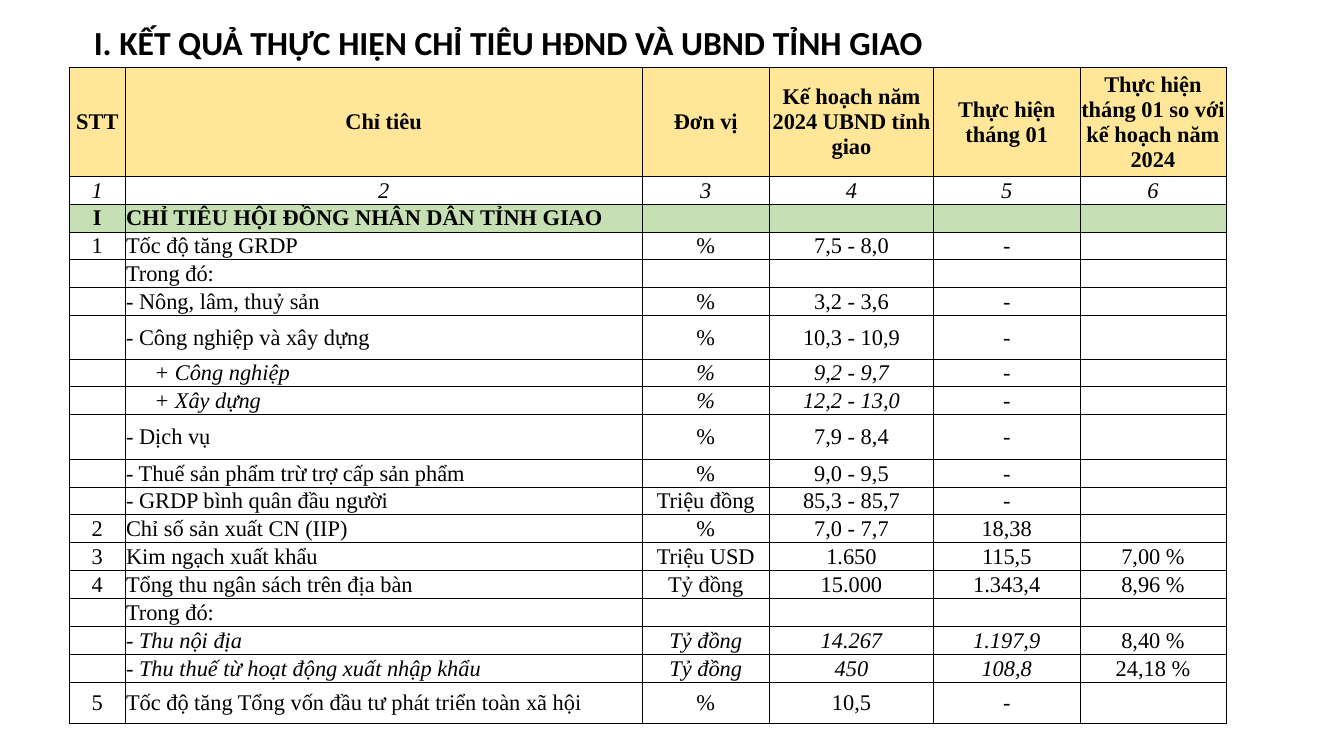
from dataclasses import dataclass

from lxml.etree import SubElement
from pptx import Presentation
from pptx.dml.color import RGBColor
from pptx.enum.text import MSO_ANCHOR, MSO_AUTO_SIZE, PP_ALIGN
from pptx.oxml.ns import qn
from pptx.slide import Slide
from pptx.table import _Cell
from pptx.text.text import TextFrame
from pptx.util import Inches, Pt

BLACK = RGBColor(0x00, 0x00, 0x00)
GOLD = RGBColor(0xFF, 0xE6, 0x99)
GREEN = RGBColor(0xC6, 0xE0, 0xB4)

WIDTHS = (0.55, 5.13, 1.26, 1.63, 1.45, 1.45)
FULL = 6.47
NAME_COL, LAST_COL = 1, 5
EDGE, INDENT = 0.01, 0.29


@dataclass(frozen=True)
class Row:
    cells: tuple[str, ...]
    height: float | None = None
    fill: RGBColor | None = None
    bold: bool = False
    italic: bool = False
    head: bool = False
    indent: float = EDGE


ROWS = (
    Row(("STT", "Chỉ tiêu", "Đơn vị", "Kế hoạch năm 2024 UBND tỉnh giao",
         "Thực hiện tháng 01", "Thực hiện tháng 01 so với kế hoạch năm 2024"),
        height=1.07, fill=GOLD, bold=True, head=True),
    Row(("1", "2", "3", "4", "5", "6"), italic=True, head=True),
    Row(("I", "CHỈ TIÊU HỘI ĐỒNG NHÂN DÂN TỈNH GIAO", "", "", "", ""),
        fill=GREEN, bold=True),
    Row(("1", "Tốc độ tăng GRDP", "%", "7,5 - 8,0", "-", "")),
    Row(("", "Trong đó:", "", "", "", "")),
    Row(("", "- Nông, lâm, thuỷ sản", "%", "3,2 - 3,6", "-", "")),
    Row(("", "- Công nghiệp và xây dựng", "%", "10,3 - 10,9", "-", ""), height=0.43),
    Row(("", "+ Công nghiệp", "%", "9,2 - 9,7", "-", ""), italic=True, indent=INDENT),
    Row(("", "+ Xây dựng", "%", "12,2 - 13,0", "-", ""), italic=True, indent=INDENT),
    Row(("", "- Dịch vụ", "%", "7,9 - 8,4", "-", ""), height=0.44),
    Row(("", "- Thuế sản phẩm trừ trợ cấp sản phẩm", "%", "9,0 - 9,5", "-", "")),
    Row(("", "- GRDP bình quân đầu người", "Triệu đồng", "85,3 - 85,7", "-", "")),
    Row(("2", "Chỉ số sản xuất CN (IIP)", "%", "7,0 - 7,7", "18,38", "")),
    Row(("3", "Kim ngạch xuất khẩu", "Triệu USD", "1.650", "115,5", "7,00 %")),
    Row(("4", "Tổng thu ngân sách trên địa bàn", "Tỷ đồng", "15.000", "1.343,4", "8,96 %")),
    Row(("", "Trong đó:", "", "", "", "")),
    Row(("", "- Thu nội địa", "Tỷ đồng", "14.267", "1.197,9", "8,40 %"), italic=True),
    Row(("", "- Thu thuế từ hoạt động xuất nhập khẩu", "Tỷ đồng", "450", "108,8", "24,18 %"),
        italic=True),
    Row(("5", "Tốc độ tăng Tổng vốn đầu tư phát triển toàn xã hội", "%", "10,5", "-", ""),
        height=0.41),
)


def write(frame: TextFrame, text: str, *, font: str = "Times New Roman", size: int = 16,
          bold: bool = False, italic: bool = False, align: PP_ALIGN = PP_ALIGN.CENTER) -> None:
    line = frame.paragraphs[0]
    line.alignment = align
    run = line.add_run()
    run.text = text
    run.font.name = font
    run.font.size = Pt(size)
    run.font.bold = bold
    run.font.italic = italic
    run.font.color.rgb = BLACK


def shrink(frame: TextFrame) -> None:
    """Keep an empty cell from making its row taller."""
    SubElement(frame.paragraphs[0]._p, qn("a:endParaRPr"), sz="1200")


def border(cell: _Cell) -> None:
    props = cell._tc.get_or_add_tcPr()
    for side in ("a:lnL", "a:lnR", "a:lnT", "a:lnB"):
        line = SubElement(props, qn(side), w=str(Pt(0.5)))
        paint = SubElement(line, qn("a:solidFill"))
        SubElement(paint, qn("a:srgbClr"), val=str(BLACK))


def draw_cell(cell: _Cell, row: Row, col: int) -> None:
    named = col == NAME_COL and not row.head
    cell.margin_left = Inches(row.indent if named else EDGE)
    cell.margin_right = cell.margin_top = Inches(EDGE)
    cell.margin_bottom = Inches(0)
    cell.vertical_anchor = MSO_ANCHOR.MIDDLE
    border(cell)
    if row.fill is None:
        cell.fill.background()
    else:
        cell.fill.solid()
        cell.fill.fore_color.rgb = row.fill
    if row.cells[col]:
        write(cell.text_frame, row.cells[col], bold=row.bold,
              italic=row.italic and (row.head or col != LAST_COL),
              align=PP_ALIGN.LEFT if named else PP_ALIGN.CENTER)
    else:
        shrink(cell.text_frame)


def draw_table(slide: Slide) -> None:
    table = slide.shapes.add_table(len(ROWS), len(WIDTHS), Inches(0.69), Inches(0.67),
                                   Inches(sum(WIDTHS)), Inches(FULL)).table
    table.first_row = table.horz_banding = False
    for column, width in zip(table.columns, WIDTHS):
        column.width = Inches(width)
    fixed = [row.height for row in ROWS if row.height]
    plain = (FULL - sum(fixed)) / (len(ROWS) - len(fixed))
    for index, row in enumerate(ROWS):
        table.rows[index].height = Inches(row.height or plain)
        for col in range(len(WIDTHS)):
            draw_cell(table.cell(index, col), row, col)


def draw_title(slide: Slide) -> None:
    title = slide.shapes.title
    title.left, title.top = Inches(0.83), Inches(0.17)
    title.width, title.height = Inches(10.8), Inches(0.5)
    frame = title.text_frame
    frame.word_wrap = True
    frame.auto_size = MSO_AUTO_SIZE.SHAPE_TO_FIT_TEXT
    frame.vertical_anchor = MSO_ANCHOR.TOP
    write(frame, "I. KẾT QUẢ THỰC HIỆN CHỈ TIÊU HĐND VÀ UBND TỈNH GIAO",
          font="Calibri", size=24, bold=True, align=PP_ALIGN.LEFT)


def main() -> None:
    deck = Presentation()
    deck.slide_width, deck.slide_height = Inches(13.33), Inches(7.5)
    slide = deck.slides.add_slide(deck.slide_layouts.get_by_name("Title Only"))
    draw_title(slide)
    draw_table(slide)
    deck.save("out.pptx")


if __name__ == "__main__":
    main()
